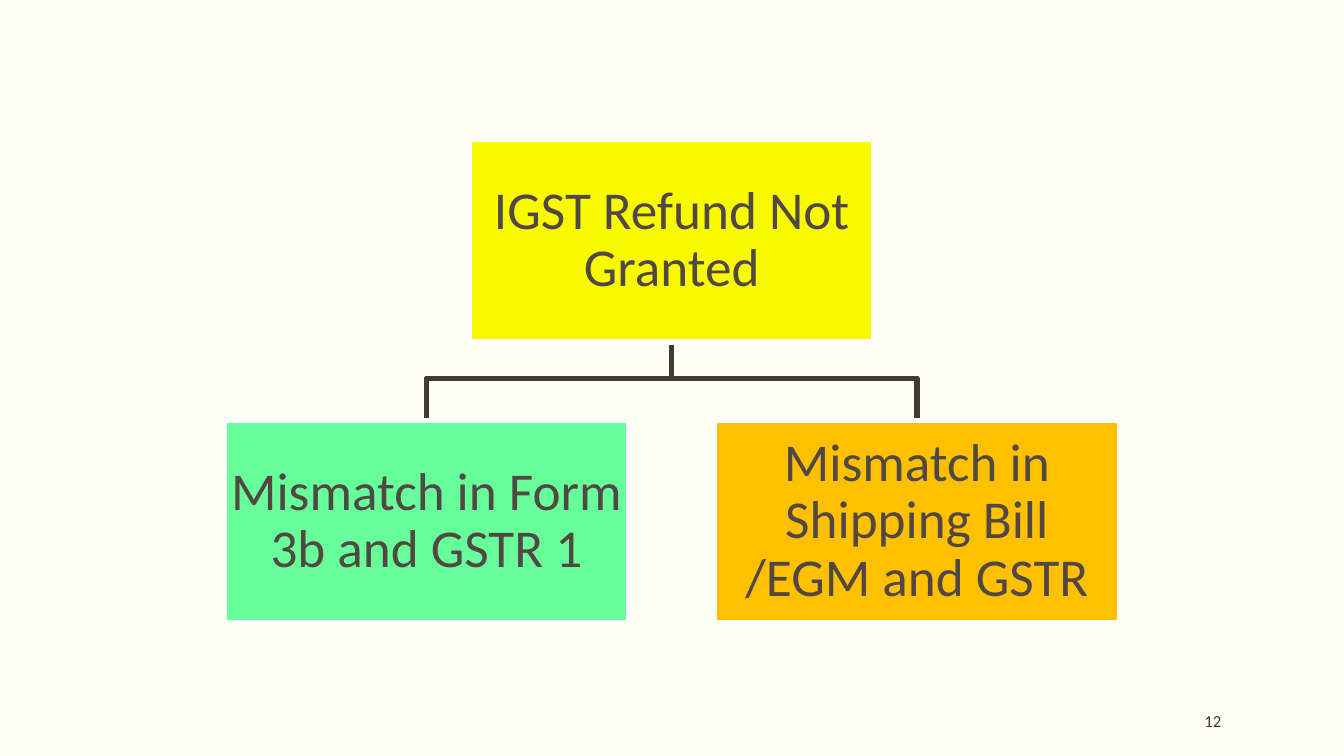
import pptx
import pptx.dml.color
import pptx.enum.shapes
import pptx.enum.text
import pptx.util
from dataclasses import dataclass

Cm = pptx.util.Cm
Pt = pptx.util.Pt
RGB = pptx.dml.color.RGBColor.from_string
ALIGN = pptx.enum.text.PP_ALIGN
MIDDLE = pptx.enum.text.MSO_ANCHOR.MIDDLE


@dataclass(frozen=True)
class Theme:
    font: str = "Calibri"
    background: str = "FFFFF3"
    text: str = "514843"
    number: str = "3D3632"
    branch: str = "413A36"
    border: str = "FFFFFF"
    cause: str = "F9F900"
    form: str = "66FF99"
    shipping: str = "FFC000"
    box_size: float = 38
    number_size: float = 12
    line_width: float = 3.78


THEME = Theme()
CENTER_X = 16.93
CHILD_OFFSET = 6.18
BOX_W, BOX_H = 10.2, 5.11
PARENT_Y, CHILD_Y = 3.51, 10.59
BEND_Y = 9.53


def write(sp, text, size, color, align, inset_x, inset_y):
    tf = sp.text_frame
    tf.word_wrap = True
    tf.vertical_anchor = MIDDLE
    tf.margin_left = tf.margin_right = Cm(inset_x)
    tf.margin_top = tf.margin_bottom = Cm(inset_y)
    p = tf.paragraphs[0]
    p.alignment = align
    r = p.add_run()
    r.text = text
    r.font.name = THEME.font
    r.font.size = Pt(size)
    r.font.color.rgb = RGB(color)
    return p


def set_line(sp, color):
    sp.shadow.inherit = False
    sp.line.color.rgb = RGB(color)
    sp.line.width = Pt(THEME.line_width)


def add_box(s, text, center_x, top, fill):
    sp = s.shapes.add_shape(
        pptx.enum.shapes.MSO_SHAPE.RECTANGLE,
        Cm(center_x - BOX_W / 2), Cm(top), Cm(BOX_W), Cm(BOX_H))
    sp.fill.solid()
    sp.fill.fore_color.rgb = RGB(fill)
    set_line(sp, THEME.border)
    p = write(sp, text, THEME.box_size, THEME.text, ALIGN.CENTER, 0.08, 0.08)
    p.line_spacing = 0.9


def add_branch(s, child_x):
    points = [(CENTER_X, BEND_Y), (child_x, BEND_Y), (child_x, CHILD_Y)]
    builder = s.shapes.build_freeform(Cm(CENTER_X), Cm(PARENT_Y + BOX_H))
    builder.add_line_segments([(Cm(x), Cm(y)) for x, y in points], close=False)
    sp = builder.convert_to_shape()
    sp.fill.background()
    set_line(sp, THEME.branch)


def add_page_number(s, text):
    sp = s.shapes.add_textbox(Cm(25.7), Cm(17.65), Cm(5.08), Cm(1.02))
    write(sp, text, THEME.number_size, THEME.number, ALIGN.RIGHT, 0, 0.13)


def main():
    prs = pptx.Presentation()
    prs.slide_width, prs.slide_height = Cm(33.87), Cm(19.05)
    s = prs.slides.add_slide(prs.slide_layouts[6])
    s.background.fill.solid()
    s.background.fill.fore_color.rgb = RGB(THEME.background)

    add_page_number(s, "12")
    children = [
        ("Mismatch in Form 3b and GSTR 1", CENTER_X - CHILD_OFFSET, THEME.form),
        ("Mismatch in Shipping Bill /EGM and GSTR", CENTER_X + CHILD_OFFSET, THEME.shipping),
    ]
    for _, x, _ in children:
        add_branch(s, x)
    add_box(s, "IGST Refund Not Granted", CENTER_X, PARENT_Y, THEME.cause)
    for text, x, fill in children:
        add_box(s, text, x, CHILD_Y, fill)

    prs.save("out.pptx")


if __name__ == "__main__":
    main()
